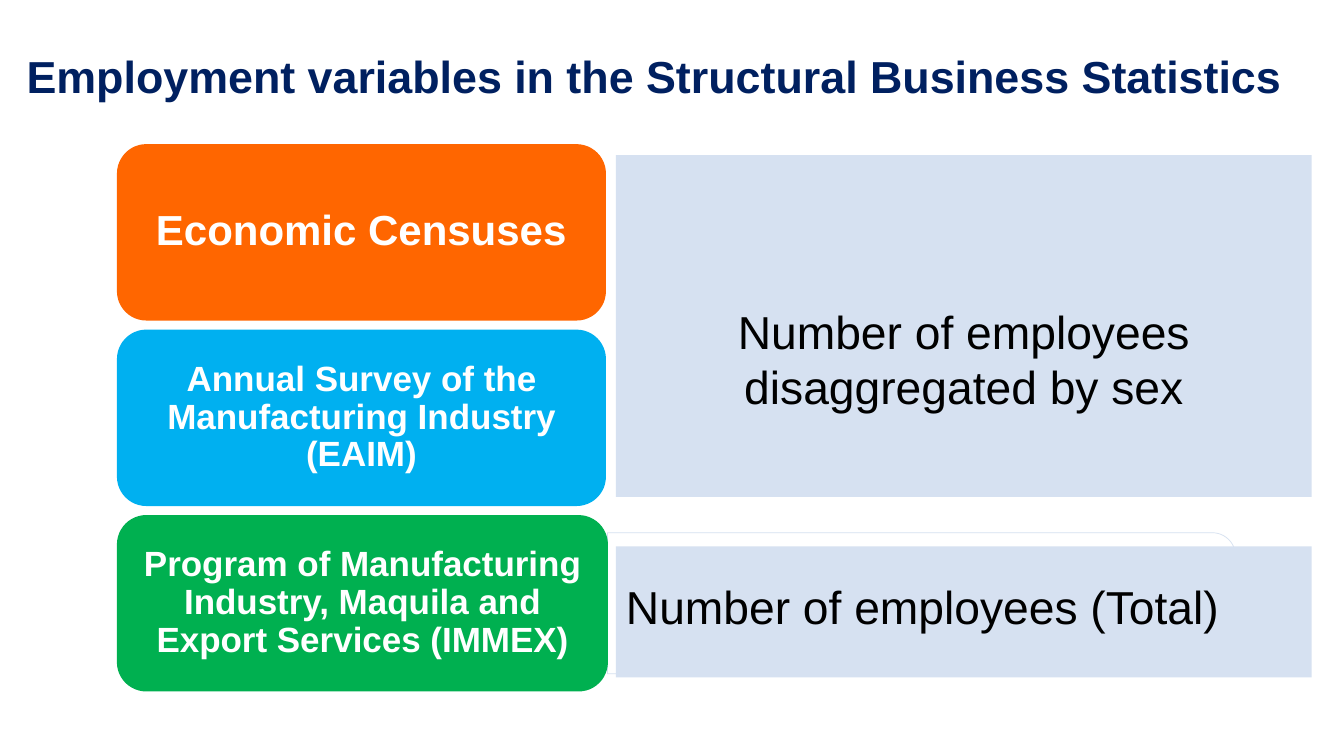
from pptx import Presentation
from pptx.dml.color import RGBColor
from pptx.enum import shapes, text
from pptx.oxml import parse_xml
from pptx.oxml.ns import nsdecls
from pptx.util import Inches, Pt

NAVY = RGBColor(0x00, 0x20, 0x60)
ORANGE = RGBColor(0xFF, 0x66, 0x00)
BLUE = RGBColor(0x00, 0xB0, 0xF0)
GREEN = RGBColor(0x00, 0xB0, 0x50)
PANEL = RGBColor(0xD6, 0xE1, 0xF1)
OUTLINE = RGBColor(0xD2, 0xDE, 0xEF)
WHITE = RGBColor(0xFF, 0xFF, 0xFF)
BLACK = RGBColor(0x00, 0x00, 0x00)

CENTER = text.PP_ALIGN.CENTER
LEFT = text.PP_ALIGN.LEFT
KIND = shapes.MSO_SHAPE


class SlideBuilder:
    """Holds the style and the slide being built."""

    font_name = "Arial"

    def __init__(self, deck):
        self.slide = deck.slides.add_slide(deck.slide_layouts[5])

    def label(self, shape, wording, size, color, bold=False, align=CENTER,
              spacing=1.0, insets=(0.1, 0.05, 0.1, 0.05)):
        frame = shape.text_frame
        frame.text = wording
        left, top, right, bottom = map(Inches, insets)
        paragraph = frame.paragraphs[0]
        font = paragraph.runs[0].font
        formats = [
            (frame, {"word_wrap": True, "auto_size": text.MSO_AUTO_SIZE.NONE,
                     "vertical_anchor": text.MSO_ANCHOR.MIDDLE,
                     "margin_left": left, "margin_top": top,
                     "margin_right": right, "margin_bottom": bottom}),
            (paragraph, {"alignment": align, "line_spacing": spacing}),
            (font, {"name": self.font_name, "size": Pt(size), "bold": bold}),
        ]
        for target, values in formats:
            for attribute, value in values.items():
                setattr(target, attribute, value)
        font.color.rgb = color

    def title(self, wording, box):
        heading = self.slide.shapes.title
        for side, length in zip(("left", "top", "width", "height"), box):
            setattr(heading, side, Inches(length))
        self.label(heading, wording, 32, NAVY, bold=True, spacing=0.9)

    def block(self, kind, box, fill):
        block = self.slide.shapes.add_shape(kind, *map(Inches, box))
        block.shadow.inherit = False
        block.fill.solid()
        block.fill.fore_color.rgb = fill
        block.line.fill.background()
        return block

    def outline(self, box):
        outline = self.slide.shapes.add_shape(
            KIND.ROUND_2_SAME_RECTANGLE, *map(Inches, box))
        outline.shadow.inherit = False
        outline.rotation = 90
        outline.fill.background()
        outline.line.width = Pt(0.5)
        outline.line.color.rgb = OUTLINE
        # Ten per cent transparency
        outline.element.spPr.find(".//{*}srgbClr").append(
            parse_xml(f'<a:alpha {nsdecls("a")} val="90000"/>'))


def main():
    deck = Presentation()
    deck.slide_width, deck.slide_height = Inches(13.33), Inches(7.5)
    builder = SlideBuilder(deck)

    # Heading
    builder.title("Employment variables in the Structural Business Statistics",
                  (-0.17, 0.29, 13.33, 0.98))

    # Frame behind the last row
    builder.outline((8.44, 2.87, 1.4, 6.23))

    # Statistical programs
    programs = [
        ("Economic Censuses", ORANGE, 30, 4.85),
        ("Annual Survey of the Manufacturing Industry (EAIM)", BLUE, 25, 4.85),
        ("Program of Manufacturing Industry, Maquila and Export Services "
         "(IMMEX)", GREEN, 25, 4.87),
    ]
    for row, (program, color, size, width) in enumerate(programs):
        card = builder.block(KIND.ROUNDED_RECTANGLE,
                             (1.16, 1.43 + row * 1.84, width, 1.75), color)
        builder.label(card, program, size, WHITE, bold=True, spacing=0.9)

    # Employment variables
    variables = [
        ("Number of employees disaggregated by sex", 1.54, 3.39, CENTER,
         (0.1, 0.69, 0.1, 0.05)),
        ("Number of employees (Total)", 5.42, 1.3, LEFT,
         (0.1, 0.05, 0.1, 0.17)),
    ]
    for variable, top, height, align, insets in variables:
        panel = builder.block(KIND.RECTANGLE, (6.11, top, 6.9, height), PANEL)
        builder.label(panel, variable, 33, BLACK, align=align, insets=insets)

    deck.save("out.pptx")


if __name__ == "__main__":
    main()
